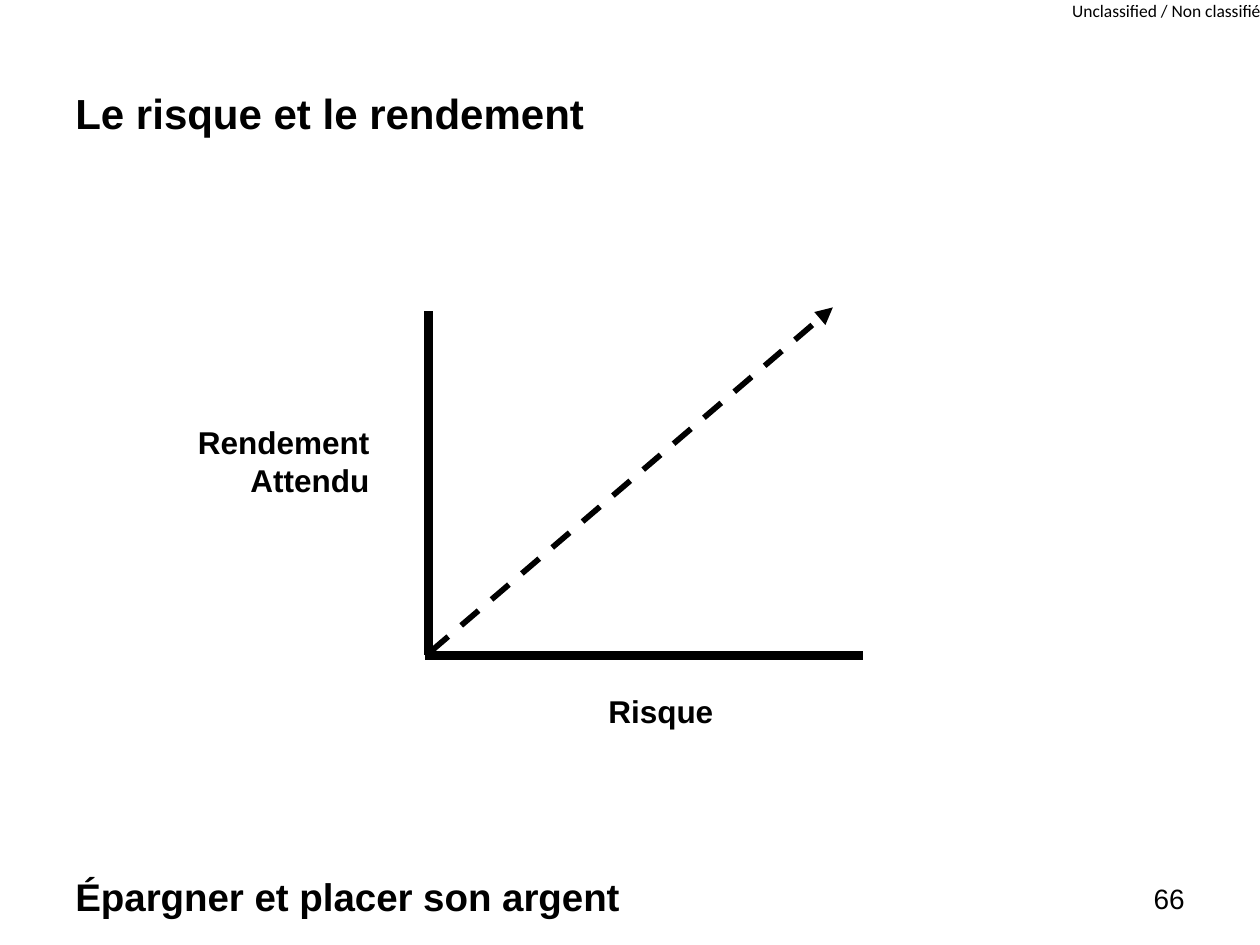
"""Build a slide that relates investment risk to expected return."""
from dataclasses import dataclass

from lxml import etree
from pptx import Presentation
from pptx import util as u
from pptx.dml.color import RGBColor
from pptx.enum import dml, shapes, text
from pptx.oxml import ns
from pptx.slide import Slide

BLACK = RGBColor(0, 0, 0)
LEFT, RIGHT = text.PP_ALIGN.LEFT, text.PP_ALIGN.RIGHT
TOP, BOTTOM = text.MSO_ANCHOR.TOP, text.MSO_ANCHOR.BOTTOM


@dataclass(frozen=True)
class Label:
    wording: str
    left: float
    top: float
    width: float
    height: float
    size: float
    bold: bool = True
    align: text.PP_ALIGN = LEFT
    anchor: text.MSO_ANCHOR = TOP
    font: str = "Arial"
    inset: bool = True
    wrap: bool = True


@dataclass(frozen=True)
class Stroke:
    start: tuple[float, float]
    end: tuple[float, float]
    weight: float
    trend: bool = False


LABELS = [
    Label("Unclassified / Non classifié", 8.51, 0, 1.52, 0.17, 10,
          bold=False, font="Calibri", inset=False, wrap=False),
    Label("Le risque et le rendement", 0.5, 0.64, 8.46, 0.5, 24, anchor=BOTTOM),
    Label("Épargner et placer son argent", 0.5, 6.88, 8.33, 0.39, 22),
    Label("66", 8.96, 6.95, 0.54, 0.33, 16, bold=False, align=RIGHT),
    Label("Rendement Attendu", 0.86, 3.31, 2.17, 0.71, 18, align=RIGHT),
    Label("Risque", 4.73, 5.44, 1.54, 0.4, 18),
]
STROKES = [
    Stroke((3.4, 2.47), (3.4, 5.2), 5),
    Stroke((3.37, 5.2), (6.85, 5.2), 5),
    Stroke((3.42, 5.17), (6.61, 2.44), 3.25, trend=True),
]


def draw_label(slide: Slide, label: Label) -> None:
    box = slide.shapes.add_textbox(
        u.Inches(label.left), u.Inches(label.top),
        u.Inches(label.width), u.Inches(label.height))
    frame = box.text_frame
    frame.text = label.wording
    frame.word_wrap = label.wrap
    frame.vertical_anchor = label.anchor
    if not label.inset:
        frame.margin_left = frame.margin_right = u.Inches(0)
        frame.margin_top = frame.margin_bottom = u.Inches(0)
    paragraph = frame.paragraphs[0]
    paragraph.alignment = label.align
    font = paragraph.runs[0].font
    font.name = label.font
    font.size = u.Pt(label.size)
    font.bold = label.bold
    font.color.rgb = BLACK


def draw_stroke(slide: Slide, stroke: Stroke) -> None:
    connector = slide.shapes.add_connector(
        shapes.MSO_CONNECTOR.STRAIGHT,
        *(u.Inches(value) for value in stroke.start + stroke.end))
    line = connector.line
    line.color.rgb = BLACK
    line.width = u.Pt(stroke.weight)
    if stroke.trend:
        line.dash_style = dml.MSO_LINE.DASH
        etree.SubElement(line._get_or_add_ln(), ns.qn("a:tailEnd"), type="triangle")
    etree.SubElement(connector._element.spPr, ns.qn("a:effectLst"))


def main() -> None:
    deck = Presentation()
    deck.slide_width, deck.slide_height = u.Inches(10), u.Inches(7.5)
    slide = deck.slides.add_slide(deck.slide_layouts[6])
    for stroke in STROKES:
        draw_stroke(slide, stroke)
    for label in LABELS:
        draw_label(slide, label)
    deck.save("out.pptx")


if __name__ == "__main__":
    main()
